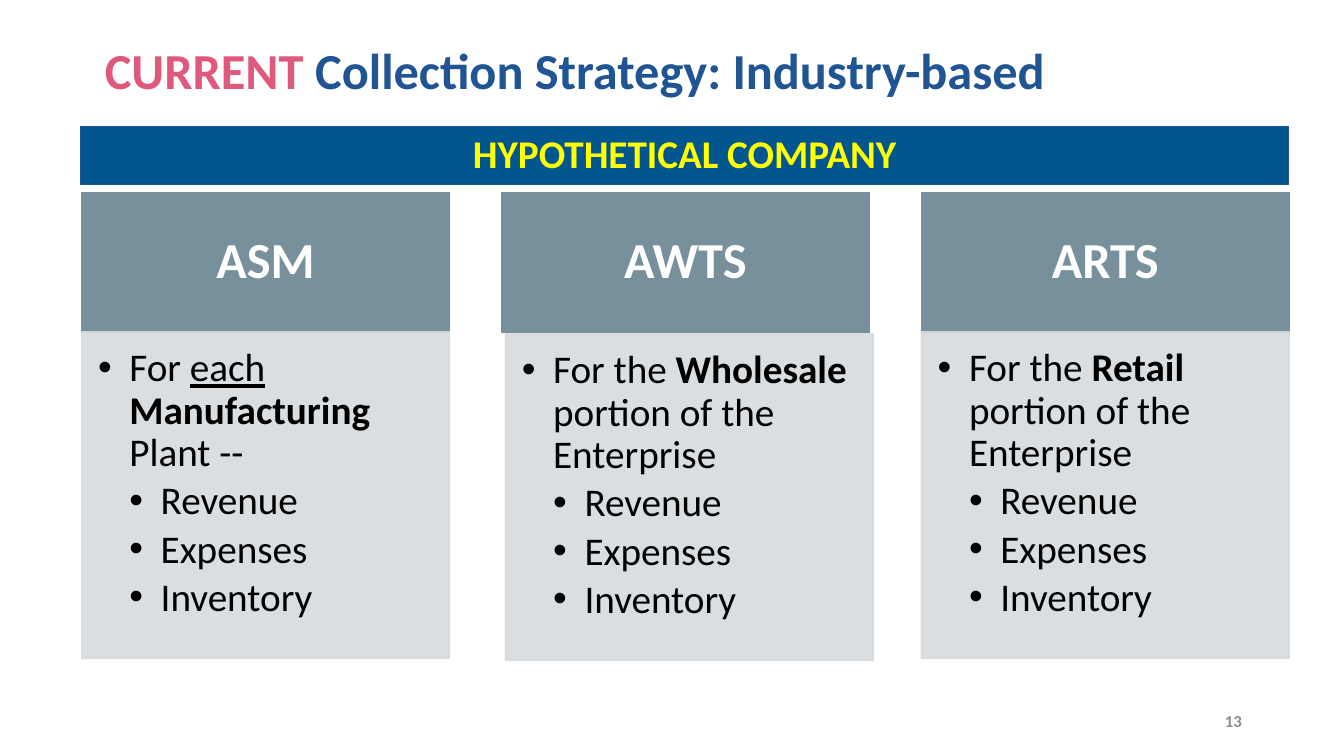
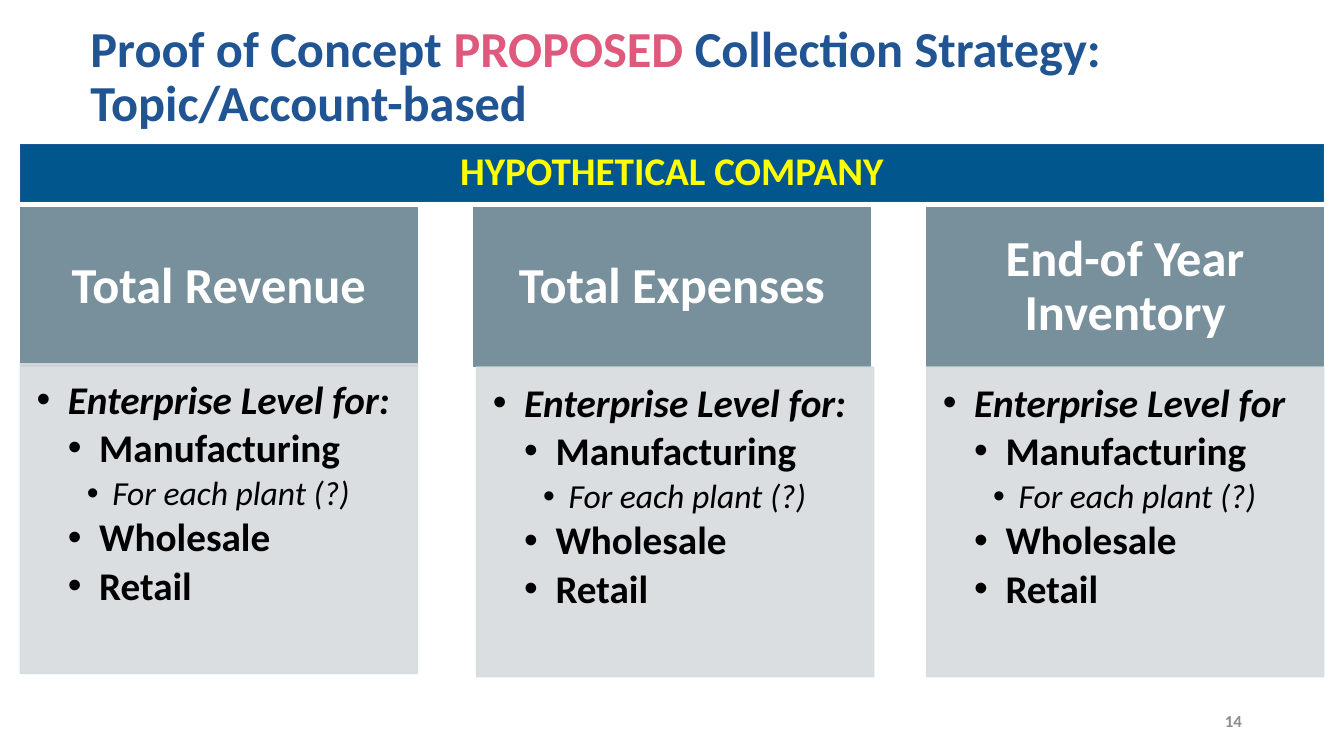
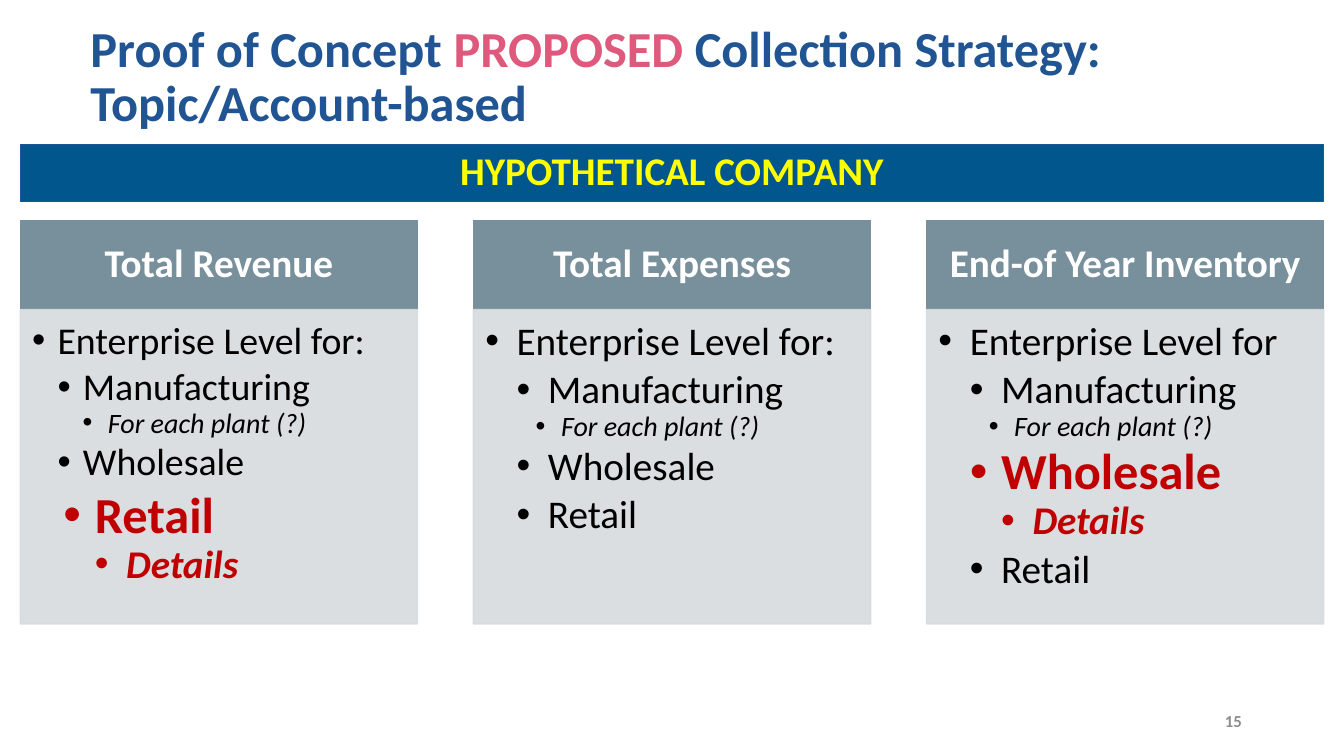
from dataclasses import dataclass
from typing import Optional

from lxml import etree
from pptx import Presentation
from pptx import util as u
from pptx.dml import color as c
from pptx.enum import shapes as s, text as t
from pptx.oxml import ns


@dataclass(frozen=True)
class Theme:
    font: str = "Calibri"
    title: str = "205493"
    accent: str = "DF597C"
    banner: str = "00568D"
    banner_text: str = "FFFF00"
    header: str = "78909C"
    header_text: str = "FFFFFF"
    panel: str = "D6DBDE"
    panel_alpha: int = 90
    body: str = "000000"
    alert: str = "C00000"
    number: str = "8C8C8C"
    large: int = 36
    normal: int = 28
    reduced: int = 27
    note: int = 24
    small_note: int = 20
    page: int = 12
    spacing: float = 0.9


THEME = Theme()


@dataclass(frozen=True)
class Grid:
    title: tuple
    banner: tuple
    left: float
    width: float
    pitch: float
    header_top: float
    header_height: float
    panel_top: float
    panel_height: float
    header_size: int = THEME.large
    header_margins: tuple = (0.71, 0.41, 0.71, 0.41)
    panel_margins: tuple = (0.41, 0.41, 0.56, 0.61)
    panel_shifts: tuple = ((0, 0), (0, 0), (0, 0))


@dataclass(frozen=True)
class Bullet:
    runs: tuple
    level: int = 0
    size: int = THEME.normal
    margin: Optional[float] = None
    hang: float = 0.79
    gap: float = 0.15
    color: str = THEME.body


WIDE = dict(title=(2.03, 0.53, 28.73, 2.95), banner=(0.51, 3.63, 32.84, 1.45),
            left=0.51, width=10.01, pitch=11.42)
INDUSTRY_GRID = Grid(
    title=(2.39, 0.28, 28.96, 2.39), banner=(2.03, 3.2, 30.45, 1.45),
    left=2.06, width=9.27, pitch=10.58,
    header_top=4.85, header_height=3.53, panel_top=8.36, panel_height=8.23,
    panel_shifts=((0, 0), (0.1, 0.05), (0, 0)))
TOPIC_GRID = Grid(
    **WIDE, header_top=5.23, header_height=4.01, panel_top=9.25, panel_height=7.8,
    panel_shifts=((0, -0.08), (0.08, 0), (0, 0)))
DETAIL_GRID = Grid(
    **WIDE, header_top=5.56, header_height=2.24, panel_top=7.8, panel_height=7.92,
    header_size=THEME.normal, header_margins=(0.56, 0.3, 0.56, 0.3),
    panel_margins=(0.3, 0.3, 0.41, 0.43))


def place(shape, box):
    shape.left, shape.top, shape.width, shape.height = (u.Cm(value) for value in box)


def paint(shape, fill, line, line_width):
    shape.fill.solid()
    shape.fill.fore_color.rgb = c.RGBColor.from_string(fill)
    shape.line.color.rgb = c.RGBColor.from_string(line)
    shape.line.width = u.Pt(line_width)


def set_frame(shape, anchor, margins=(0.25, 0.13, 0.25, 0.13)):
    frame = shape.text_frame
    frame.word_wrap = True
    frame.auto_size = t.MSO_AUTO_SIZE.NONE
    frame.vertical_anchor = anchor
    frame.margin_left, frame.margin_top, frame.margin_right, frame.margin_bottom = (
        u.Cm(value) for value in margins)
    return frame


def add_run(paragraph, words, size, color, flags=""):
    run = paragraph.add_run()
    run.text = words
    font = run.font
    font.name = THEME.font
    font.size = u.Pt(size)
    font.color.rgb = c.RGBColor.from_string(color)
    font.bold = "b" in flags
    font.italic = "i" in flags
    if "u" in flags:
        font.underline = True


def add_title(slide, box, runs):
    title = slide.shapes.title
    place(title, box)
    paragraph = set_frame(title, t.MSO_ANCHOR.BOTTOM).paragraphs[0]
    paragraph.alignment = t.PP_ALIGN.LEFT
    paragraph.line_spacing = THEME.spacing
    for words, color in runs:
        add_run(paragraph, words, THEME.large, color, "b")


def add_block(slide, box, words, size, fill, line, line_width, color, margins):
    block = slide.shapes.add_shape(s.MSO_SHAPE.RECTANGLE, *(u.Cm(value) for value in box))
    block.shadow.inherit = False
    paint(block, fill, line, line_width)
    paragraph = set_frame(block, t.MSO_ANCHOR.MIDDLE, margins).paragraphs[0]
    paragraph.alignment = t.PP_ALIGN.CENTER
    paragraph.line_spacing = THEME.spacing
    add_run(paragraph, words, size, color, "b")


def add_bullet(paragraph, bullet):
    margin = bullet.hang * (bullet.level + 1) if bullet.margin is None else bullet.margin
    paragraph.level = bullet.level
    paragraph.alignment = t.PP_ALIGN.LEFT
    paragraph.line_spacing = THEME.spacing
    paragraph.space_before = u.Pt(0)
    paragraph.space_after = u.Pt(round(bullet.size * bullet.gap, 1))
    properties = paragraph._p.get_or_add_pPr()
    properties.set("marL", str(u.Cm(margin)))
    properties.set("indent", str(-u.Cm(bullet.hang)))
    etree.SubElement(properties, ns.qn("a:buChar")).set("char", "•")
    for words, flags in bullet.runs:
        add_run(paragraph, words, bullet.size, bullet.color, flags)


def add_panel(slide, index, box, margins, bullets):
    panel = slide.placeholders[index]
    panel.element.getparent().append(panel.element)
    place(panel, box)
    paint(panel, THEME.panel, THEME.panel, 1)
    for color in panel.element.spPr.iter(ns.qn("a:srgbClr")):
        etree.SubElement(color, ns.qn("a:alpha")).set("val", str(THEME.panel_alpha * 1000))
    frame = set_frame(panel, t.MSO_ANCHOR.TOP, margins)
    for position, bullet in enumerate(bullets):
        paragraph = frame.add_paragraph() if position else frame.paragraphs[0]
        add_bullet(paragraph, bullet)


def add_page_number(slide, number):
    box = slide.shapes.add_textbox(u.Cm(23.93), u.Cm(17.65), u.Cm(7.62), u.Cm(1.02))
    paragraph = set_frame(box, t.MSO_ANCHOR.MIDDLE).paragraphs[0]
    paragraph.alignment = t.PP_ALIGN.RIGHT
    add_run(paragraph, str(number), THEME.page, THEME.number, "b")


def add_strategy_slide(presentation, number, grid, title, columns):
    slide = presentation.slides.add_slide(
        presentation.slide_layouts.get_by_name("Comparison"))
    add_title(slide, grid.title, title)
    add_page_number(slide, number)
    for index, (heading, bullets) in enumerate(columns):
        left = grid.left + index * grid.pitch
        add_block(slide, (left, grid.header_top, grid.width, grid.header_height),
                  heading, grid.header_size, THEME.header, THEME.header, 1,
                  THEME.header_text, grid.header_margins)
        across, down = grid.panel_shifts[index]
        add_panel(slide, index + 1,
                  (left + across, grid.panel_top + down, grid.width, grid.panel_height),
                  grid.panel_margins, bullets)
    add_block(slide, grid.banner, "HYPOTHETICAL COMPANY", THEME.normal, THEME.banner,
              THEME.title, 0.75, THEME.banner_text, (0.25, 0.13, 0.25, 0.13))
    unused = slide.placeholders[len(columns) + 1].element
    unused.getparent().remove(unused)


def plain(words, level=1, flags="", **style):
    return Bullet(((words, flags),), level, **style)


def plant_note(size):
    return plain("For each plant (?)", 2, "i", size=size, margin=1.91, hang=0.64)


def industry_list(*runs):
    return [Bullet(runs), *map(plain, ("Revenue", "Expenses", "Inventory"))]


def topic_list(lead):
    return [plain(lead, 0, "bi"), plain("Manufacturing", flags="b"),
            plant_note(THEME.note),
            plain("Wholesale", flags="b"), plain("Retail", flags="b")]


def detail_list(lead, detailed=None, **style):
    bullets = [plain(lead, 0, **style), plain("Manufacturing", gap=0, **style),
               plant_note(THEME.small_note)]
    for sector in ("Wholesale", "Retail"):
        if sector == detailed:
            bullets += [plain(sector, flags="b", size=THEME.large, gap=0, color=THEME.alert),
                        plain("Details", 2, "bi", color=THEME.alert)]
        else:
            bullets.append(plain(sector, **style))
    return bullets


def main():
    presentation = Presentation()
    presentation.slide_width, presentation.slide_height = u.Cm(33.87), u.Cm(19.05)

    current_title = (("CURRENT", THEME.accent),
                     (" Collection Strategy: Industry-based", THEME.title))
    proposed_title = (("Proof of Concept ", THEME.title), ("PROPOSED", THEME.accent),
                      (" Collection Strategy: Topic/Account-based", THEME.title))
    topics = ("Total Revenue", "Total Expenses", "End-of Year Inventory")
    leads = ("Enterprise Level for:", "Enterprise Level for:", "Enterprise Level for")
    portion = (" portion of the Enterprise", "")

    industries = [
        ("ASM", industry_list(("For ", ""), ("each", "u"), (" ", ""),
                              ("Manufacturing", "b"), (" Plant --", ""))),
        ("AWTS", industry_list(("For the ", ""), ("Wholesale", "b"), portion)),
        ("ARTS", industry_list(("For the ", ""), ("Retail", "b"), portion)),
    ]
    details = [
        detail_list(leads[0], "Retail", size=THEME.reduced, hang=0.64),
        detail_list(leads[1]),
        detail_list(leads[2], "Wholesale"),
    ]

    add_strategy_slide(presentation, 13, INDUSTRY_GRID, current_title, industries)
    add_strategy_slide(presentation, 14, TOPIC_GRID, proposed_title,
                       list(zip(topics, map(topic_list, leads))))
    add_strategy_slide(presentation, 15, DETAIL_GRID, proposed_title,
                       list(zip(topics, details)))
    presentation.save("out.pptx")


if __name__ == "__main__":
    main()
